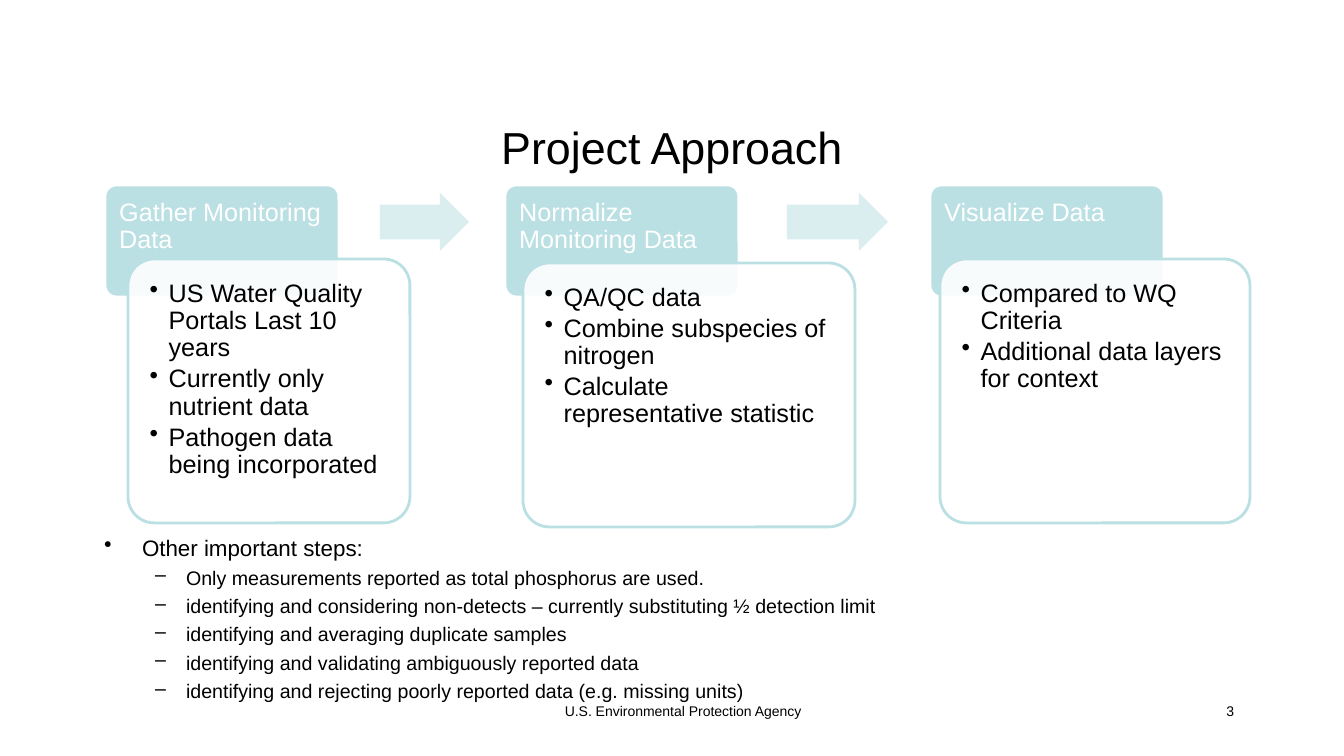
from lxml import etree
from pptx import Presentation
from pptx.dml.color import RGBColor
from pptx.enum.shapes import MSO_SHAPE
from pptx.enum.text import MSO_ANCHOR, PP_ALIGN
from pptx.oxml.ns import qn
from pptx.util import Emu, Pt

ROUND = MSO_SHAPE.ROUNDED_RECTANGLE
ARROW = MSO_SHAPE.RIGHT_ARROW
TOP, MIDDLE = MSO_ANCHOR.TOP, MSO_ANCHOR.MIDDLE
LEFT, CENTER, RIGHT = PP_ALIGN.LEFT, PP_ALIGN.CENTER, PP_ALIGN.RIGHT

BLACK = RGBColor(0, 0, 0)
WHITE = RGBColor(255, 255, 255)
TEAL = RGBColor(0xBB, 0xE0, 0xE3)
PALE = RGBColor(0xDA, 0xED, 0xEF)
FONT = "Arial"

# Content: lengths in px
TITLE = "Project Approach"
FOOTER = "U.S. Environmental Protection Agency"
PAGE = "3"
# head text, head left, panel (left, top, width), points
STEPS = [
    ("Gather Monitoring Data", 105, (128, 259, 282),
     ["US Water Quality Portals Last 10 years",
      "Currently only nutrient data",
      "Pathogen data being incorporated"]),
    ("Normalize Monitoring Data", 505, (523, 263, 332),
     ["QA/QC data",
      "Combine subspecies of nitrogen",
      "Calculate representative statistic"]),
    ("Visualize Data", 930, (940, 259, 310),
     ["Compared to WQ Criteria",
      "Additional data layers for context"]),
]
ARROWS = [(380, 89), (787, 101)]  # left, width
OTHER = "Other important steps:"
NOTES = [
    "Only measurements reported as total phosphorus are used.",
    "identifying and considering non-detects – currently substituting ½ detection limit",
    "identifying and averaging duplicate samples",
    "identifying and validating ambiguously reported data",
    "identifying and rejecting poorly reported data (e.g. missing units)",
]
HEAD_TOP, HEAD_W, HEAD_H = 185, 234, 112
PANEL_H = 264
ARROW_TOP, ARROW_H = 193, 58


def px(n):
    return Emu(round(n * 914400 / 100.8))


def setup(frame, pads, anchor=TOP):
    frame.word_wrap = True
    frame.vertical_anchor = anchor
    (frame.margin_left, frame.margin_top,
     frame.margin_right, frame.margin_bottom) = map(px, pads)


def write(frame, lines, size, color=BLACK, align=LEFT, mark=None,
          indent=(0, 0), level=0, before=0, after=0, space=1.0):
    """Add one paragraph per line; indent is (left, hang) in px."""
    for line in lines:
        first = not frame.paragraphs[0].runs
        para = frame.paragraphs[0] if first else frame.add_paragraph()
        para.level = level
        para.alignment = align
        para.line_spacing = space
        para.space_before = Pt(0 if first else before)
        para.space_after = Pt(after)
        if mark:
            props = para._p.get_or_add_pPr()
            props.set("marL", str(px(indent[0])))
            props.set("indent", str(-px(indent[1])))
            etree.SubElement(props, qn("a:buChar")).set("char", mark)
        run = para.add_run()
        run.text = line
        run.font.name = FONT
        run.font.size = Pt(size)
        run.font.color.rgb = color


def add_box(slide, box, anchor=TOP):
    frame = slide.shapes.add_textbox(*map(px, box)).text_frame
    setup(frame, (10, 5, 10, 5), anchor)
    return frame


def add_form(slide, kind, box, fill, edge, adjust):
    form = slide.shapes.add_shape(kind, *map(px, box))
    form.shadow.inherit = False
    for i, value in enumerate(adjust):
        form.adjustments[i] = value
    form.fill.solid()
    form.fill.fore_color.rgb = fill
    if edge is None:
        form.line.fill.background()
    else:
        form.line.color.rgb = edge
        form.line.width = Pt(2)
    return form


def fade(form, percent):
    tint = form.fill._xPr.find(qn("a:solidFill"))[0]
    etree.SubElement(tint, qn("a:alpha")).set("val", str(percent * 1000))


def main():
    deck = Presentation()
    deck.slide_width, deck.slide_height = px(1344), px(756)
    slide = deck.slides.add_slide(deck.slide_layouts[6])

    # Title
    title = add_box(slide, (252, 92, 840, 109), MIDDLE)
    write(title, [TITLE], 32, align=CENTER)

    # Other steps
    body = add_box(slide, (94, 529, 1149, 225))
    write(body, [OTHER], 16, mark="•", indent=(38, 38))
    write(body, NOTES, 14, mark="–", indent=(82, 31), level=1, before=3.4)

    # Footer and page number
    write(add_box(slide, (280, 698, 806, 42)), [FOOTER], 10, align=CENTER)
    write(add_box(slide, (964, 698, 280, 42)), [PAGE], 10, align=RIGHT)

    # Steps: a head with a panel laid over it
    for name, left, (x, y, wide), points in STEPS:
        head = add_form(slide, ROUND, (left, HEAD_TOP, HEAD_W, HEAD_H),
                        TEAL, WHITE, [0.1])
        setup(head.text_frame, (11, 11, 10, 7))
        write(head.text_frame, [name], 18, WHITE, space=0.9)

        panel = add_form(slide, ROUND, (x, y, wide, PANEL_H),
                         WHITE, TEAL, [0.1])
        fade(panel, 90)
        setup(panel.text_frame, (14, 14, 14, 14))
        write(panel.text_frame, points, 18, mark="•", indent=(19, 19),
              level=1, after=2.7, space=0.9)

    # Arrows between steps
    for left, wide in ARROWS:
        add_form(slide, ARROW, (left, ARROW_TOP, wide, ARROW_H),
                 PALE, None, [0.6, 0.5])

    deck.save("out.pptx")


if __name__ == "__main__":
    main()
